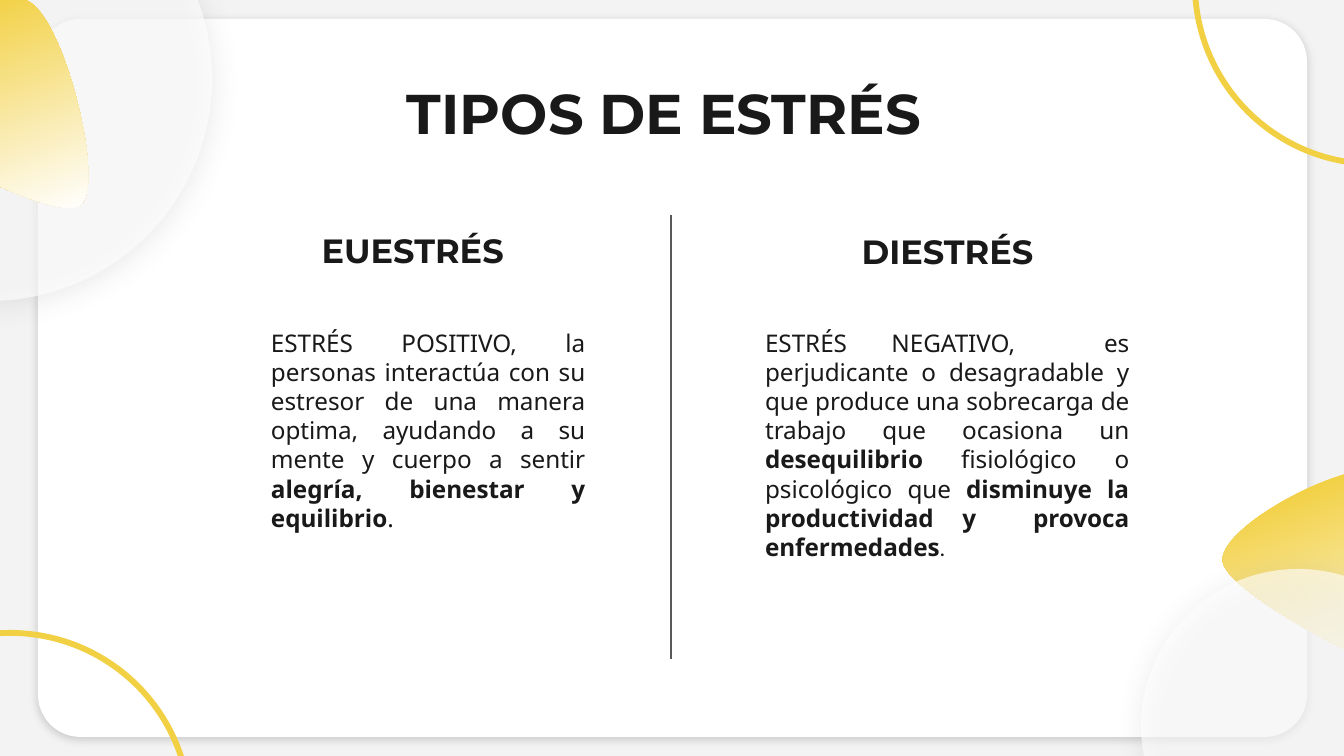
from copy import deepcopy
from dataclasses import dataclass

from lxml import etree
from pptx import Presentation
from pptx import util as u
from pptx.dml.color import RGBColor
from pptx.enum import shapes, text
from pptx.oxml.ns import qn

PX = 914400 / 134.4
COLORS = {
    "backdrop": "F3F3F3",
    "white": "FFFFFF",
    "yellow": "F2D044",
    "ink": "191919",
    "divider": "595959",
    "black": "000000",
}
HEADING_FONT, BODY_FONT = "Montserrat", "Noto Sans"

# Leaf outline: a start point, then cubic curves (two controls and an end)
LEAF_WIDTH, LEAF_HEIGHT = 230, 208
LEAF_START = (219, 205)
LEAF_CURVES = [
    ((247, 191), (206, 19), (168, 0)),
    ((132, -19), (-9, 56), (0, 91)),
    ((8, 125), (191, 222), (219, 205)),
]


@dataclass
class Box:
    left: int
    top: int
    width: int
    height: int


@dataclass
class Shadow:
    color: str
    opacity: int
    blur: float
    distance: float
    angle: int


@dataclass
class Run:
    text: str
    bold: bool = False
    font: str = BODY_FONT


@dataclass
class TextBlock:
    box: Box
    size: int
    align: text.PP_ALIGN
    runs: list[Run]
    anchor: text.MSO_ANCHOR = text.MSO_ANCHOR.TOP


CARD_SHADOW = Shadow("black", 17, 4.5, 1.5, 90)
DISC_SHADOW = Shadow("divider", 19, 14.6, 2.2, 74)


def px(length: float) -> u.Emu:
    return u.Emu(round(length * PX))


def rgb(name: str) -> RGBColor:
    return RGBColor.from_string(COLORS[name])


def place(box: Box) -> list[u.Emu]:
    return [px(v) for v in (box.left, box.top, box.width, box.height)]


def add_opacity(color_node, percent: int) -> None:
    etree.SubElement(color_node, qn("a:alpha"), val=str(percent * 1000))


def add_shadow(shape, shadow: Shadow) -> None:
    effects = shape.element.spPr.find(qn("a:effectLst"))
    outer = etree.SubElement(
        effects, qn("a:outerShdw"),
        blurRad=str(u.Pt(shadow.blur)), dist=str(u.Pt(shadow.distance)),
        dir=str(shadow.angle * 60000), algn="bl", rotWithShape="0")
    color = etree.SubElement(outer, qn("a:srgbClr"), val=COLORS[shadow.color])
    add_opacity(color, shadow.opacity)


def add_preset(slide, kind: shapes.MSO_SHAPE, box: Box, color: str,
               adjustment: float | None = None):
    shape = slide.shapes.add_shape(kind, *place(box))
    shape.fill.solid()
    shape.fill.fore_color.rgb = rgb(color)
    shape.line.fill.background()
    shape.shadow.inherit = False
    if adjustment is not None:
        shape.adjustments[0] = adjustment
    return shape


def add_ring(slide, left: int, top: int) -> None:
    add_preset(slide, shapes.MSO_SHAPE.DONUT, Box(left, top, 366, 366), "yellow", 0.016)


def add_disc(slide, left: int, top: int, diameter: int) -> None:
    """Translucent white circle with a soft shadow."""
    disc = add_preset(slide, shapes.MSO_SHAPE.OVAL,
                      Box(left, top, diameter, diameter), "white")
    add_opacity(disc.element.spPr.find(f"{qn('a:solidFill')}/{qn('a:srgbClr')}"), 62)
    add_shadow(disc, DISC_SHADOW)


def curve_outline(freeform) -> None:
    """Replace the freeform's straight sides with the leaf's cubic curves."""
    outline = next(freeform.element.iter(qn("a:path")))
    for side in list(outline):
        outline.remove(side)
    commands = [("a:moveTo", [LEAF_START])]
    commands += [("a:cubicBezTo", curve) for curve in LEAF_CURVES]
    for tag, points in commands:
        command = etree.SubElement(outline, qn(tag))
        for x, y in points:
            etree.SubElement(command, qn("a:pt"), x=str(px(x)), y=str(px(y)))
    etree.SubElement(outline, qn("a:close"))


def add_leaf(slide, left: int, top: int) -> None:
    right, bottom = left + LEAF_WIDTH, top + LEAF_HEIGHT
    builder = slide.shapes.build_freeform(px(left), px(top), scale=1.0)
    builder.add_line_segments(
        [(px(right), px(top)), (px(right), px(bottom)), (px(left), px(bottom))])
    leaf = builder.convert_to_shape()
    curve_outline(leaf)
    leaf.fill.gradient()
    leaf.fill.gradient_angle = 290
    first = next(leaf.element.iter(qn("a:gs")))
    first.addnext(deepcopy(first))
    stops = [(0, "yellow"), (0.15, "yellow"), (1, "white")]
    for stop, (position, color) in zip(leaf.fill.gradient_stops, stops):
        stop.position = position
        stop.color.rgb = rgb(color)
    leaf.line.fill.background()
    leaf.shadow.inherit = False


def add_text(slide, block: TextBlock) -> None:
    frame = slide.shapes.add_textbox(*place(block.box)).text_frame
    frame.word_wrap = True
    frame.vertical_anchor = block.anchor
    frame.margin_left = frame.margin_right = px(13)
    frame.margin_top = frame.margin_bottom = px(13)
    paragraph = frame.paragraphs[0]
    paragraph.alignment = block.align
    for part in block.runs:
        run = paragraph.add_run()
        run.text = part.text
        run.font.size = u.Pt(block.size)
        run.font.name = part.font
        run.font.bold = part.bold
        run.font.color.rgb = rgb("ink")


def add_divider(slide, x: int, top: int, bottom: int) -> None:
    divider = slide.shapes.add_connector(
        shapes.MSO_CONNECTOR.STRAIGHT, px(x), px(top), px(x), px(bottom))
    divider.line.color.rgb = rgb("divider")
    divider.line.width = u.Pt(0.75)
    etree.SubElement(divider.element.spPr, qn("a:effectLst"))


def heading(box: Box, size: int, words: str, anchor=text.MSO_ANCHOR.BOTTOM) -> TextBlock:
    return TextBlock(box, size, text.PP_ALIGN.CENTER,
                     [Run(words, True, HEADING_FONT)], anchor)


def body(left: int, width: int, runs: list[Run]) -> TextBlock:
    return TextBlock(Box(left, 315, width, 265), 13, text.PP_ALIGN.JUSTIFY, runs)


TEXTS = [
    heading(Box(106, 66, 1132, 85), 30, "TIPOS DE ESTRÉS ", text.MSO_ANCHOR.TOP),
    body(752, 390, [
        Run("ESTRÉS NEGATIVO,  es perjudicante o desagradable y que produce "
            "una sobrecarga de trabajo que ocasiona un "),
        Run("desequilibrio", True),
        Run(" fisiológico o psicológico que "),
        Run("disminuye la productividad y  provoca enfermedades", True),
        Run(".", font="Roboto"),
    ]),
    body(258, 340, [
        Run("ESTRÉS POSITIVO, la personas interactúa con su estresor de una "
            "manera optima, ayudando a su mente y cuerpo a sentir "),
        Run("alegría, bienestar y equilibrio", True),
        Run("."),
    ]),
    heading(Box(807, 229, 281, 55), 18, "DIESTRÉS"),
    heading(Box(256, 228, 323, 55), 18, "EUESTRÉS "),
]


def main() -> None:
    deck = Presentation()
    deck.slide_width, deck.slide_height = px(1344), px(756)
    slide = deck.slides.add_slide(deck.slide_layouts[6])
    slide.background.fill.solid()
    slide.background.fill.fore_color.rgb = rgb("backdrop")
    card = add_preset(slide, shapes.MSO_SHAPE.ROUNDED_RECTANGLE,
                      Box(38, 19, 1269, 718), "white", 0.059)
    add_shadow(card, CARD_SHADOW)
    add_leaf(slide, 1223, 472)
    add_ring(slide, 1192, -199)
    add_ring(slide, -173, 630)
    add_disc(slide, -233, -144, 445)
    for block in TEXTS:
        add_text(slide, block)
    add_divider(slide, 671, 215, 659)
    add_disc(slide, 1141, 569, 314)
    add_leaf(slide, -140, 1)
    deck.save("out.pptx")


if __name__ == "__main__":
    main()
